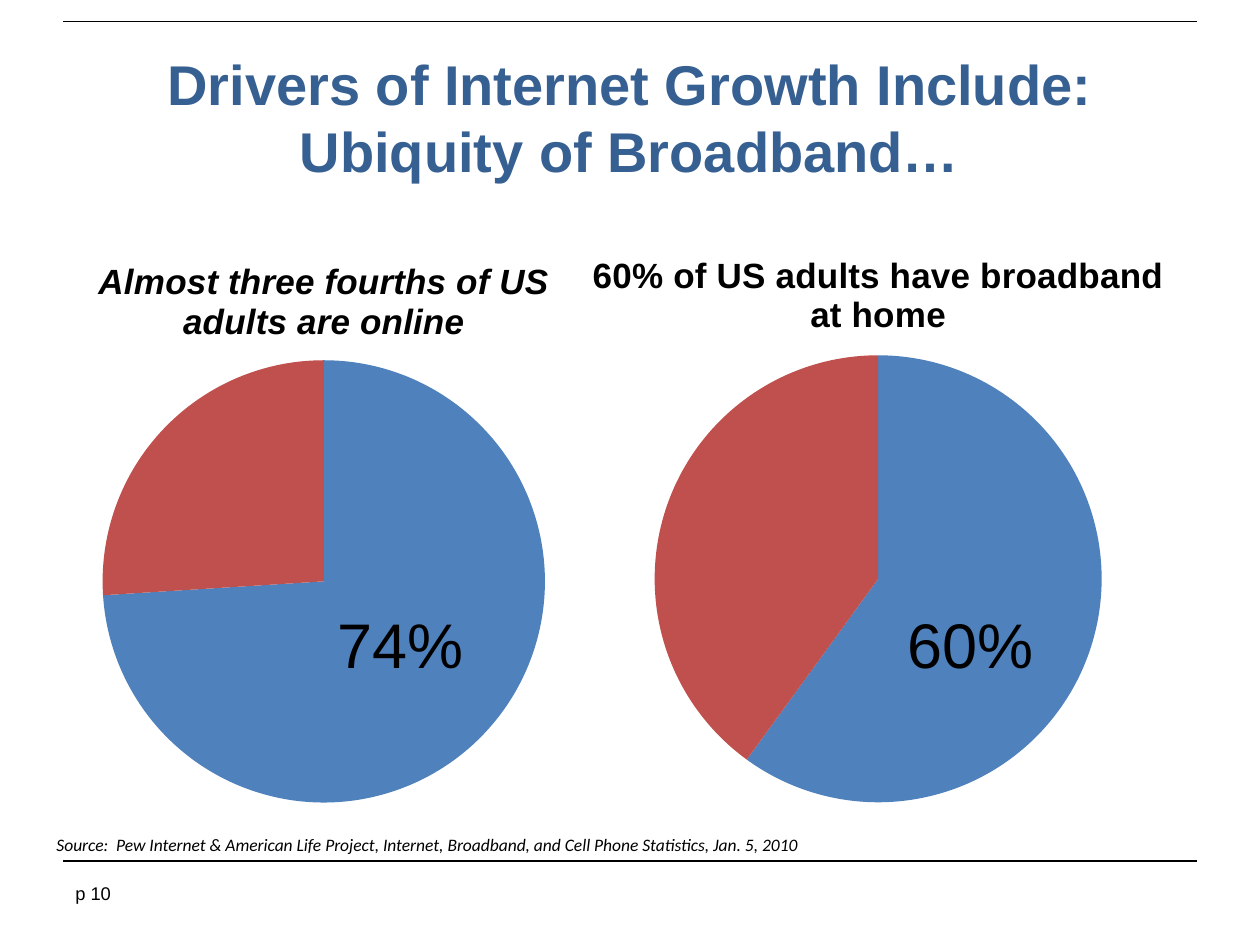
from dataclasses import dataclass

from lxml import etree
from pptx import Presentation
from pptx import util as u
from pptx.chart.data import CategoryChartData
from pptx.dml.color import RGBColor
from pptx.enum import chart as charts, shapes, text
from pptx.oxml import parse_xml
from pptx.oxml.ns import nsdecls, qn


@dataclass(frozen=True)
class Theme:
    heading: str = "Arial"
    body: str = "Calibri"
    ink: str = "000000"
    title: str = "376092"
    slices: tuple = ("4F81BD", "C0504D")
    title_size: float = 32
    chart_title_size: float = 20
    chart_size: float = 18
    label_size: float = 36
    source_size: float = 10
    page_size: float = 10.5
    rule_width: float = 1


class SlideBuilder:
    """Places elements on a grid of 100 columns by 75 rows."""

    COLUMNS, ROWS = 100, 75

    def __init__(self, presentation, theme):
        self.theme = theme
        self.cell_width = presentation.slide_width / self.COLUMNS
        self.cell_height = presentation.slide_height / self.ROWS
        self.slide = presentation.slides.add_slide(presentation.slide_layouts[5])

    def place(self, column, row, columns, rows):
        return (u.Emu(round(column * self.cell_width)), u.Emu(round(row * self.cell_height)),
                u.Emu(round(columns * self.cell_width)), u.Emu(round(rows * self.cell_height)))

    def style(self, font, name, size, color=None, bold=False, italic=False):
        font.name, font.size = name, u.Pt(size)
        font.bold, font.italic = bold, italic
        font.color.rgb = RGBColor.from_string(color or self.theme.ink)

    def rule(self, row):
        left, top, width, _ = self.place(5, row, 90, 0)
        line = self.slide.shapes.add_connector(
            shapes.MSO_CONNECTOR.STRAIGHT, left, top, left + width, top)
        line.line.color.rgb = RGBColor.from_string(self.theme.ink)
        line.line.width = u.Pt(self.theme.rule_width)
        etree.SubElement(line._element.spPr, qn("a:effectLst"))

    def title(self, wording, area):
        shape = self.slide.shapes.title
        shape.left, shape.top, shape.width, shape.height = self.place(*area)
        frame = shape.text_frame
        frame.text = wording
        frame.word_wrap = True
        frame.vertical_anchor = text.MSO_ANCHOR.MIDDLE
        paragraph = frame.paragraphs[0]
        paragraph.alignment = text.PP_ALIGN.CENTER
        self.style(paragraph.runs[0].font, self.theme.heading, self.theme.title_size,
                   self.theme.title, bold=True)

    def text(self, wording, area, name, size, italic=False, wrap=True, spacing=None):
        frame = self.slide.shapes.add_textbox(*self.place(*area)).text_frame
        frame.text = wording
        frame.word_wrap = wrap
        paragraph = frame.paragraphs[0]
        paragraph.line_spacing = spacing
        self.style(paragraph.runs[0].font, name, size, italic=italic)

    def pie(self, heading, share, area, italic=False):
        data = CategoryChartData()
        data.categories = ["1", "2"]
        data.add_series("Series 1", (share, 100 - share))
        chart = self.slide.shapes.add_chart(
            charts.XL_CHART_TYPE.PIE, *self.place(*area), data).chart
        chart.has_legend = False
        self.style(chart.font, self.theme.body, self.theme.chart_size)

        # Heading above the pie
        chart.has_title = True
        chart.chart_title.include_in_layout = False
        frame = chart.chart_title.text_frame
        frame.text = heading
        self.style(frame.paragraphs[0].runs[0].font, self.theme.heading,
                   self.theme.chart_title_size, bold=True, italic=italic)

        # Slice colours
        plot = chart.plots[0]
        plot.vary_by_categories = True
        for index, color in enumerate(self.theme.slices):
            fill = plot.series[0].points[index].format.fill
            fill.solid()
            fill.fore_color.rgb = RGBColor.from_string(color)
        self.fit_pie(chart, area)

    def fit_pie(self, chart, area):
        """Centre a round plot just above the bottom of the chart."""
        diameter, bottom = 0.755, 0.97
        width = diameter * area[3] / area[2]
        values = {"x": (1 - width) / 2, "y": bottom - diameter, "w": width, "h": diameter}
        sizes = "".join(f'<c:{key} val="{value:.4f}"/>' for key, value in values.items())
        plot_area = chart._chartSpace.find(qn("c:chart")).find(qn("c:plotArea"))
        for layout in plot_area.findall(qn("c:layout")):
            plot_area.remove(layout)
        plot_area.insert(0, parse_xml(
            f'<c:layout {nsdecls("c")}><c:manualLayout><c:layoutTarget val="inner"/>'
            f'<c:xMode val="edge"/><c:yMode val="edge"/>{sizes}</c:manualLayout></c:layout>'))


def main():
    presentation = Presentation()
    presentation.slide_width, presentation.slide_height = u.Inches(10), u.Inches(7.5)
    theme = Theme()
    builder = SlideBuilder(presentation, theme)

    # Frame and title
    for row in (68.35, 1.7):
        builder.rule(row)
    builder.title("Drivers of Internet Growth Include: Ubiquity of Broadband…", (5, 3, 90, 12.5))

    # Pies, then their share labels on top
    pies = (
        ("Almost three fourths of US adults are online", 74, (0, 18.6, 51.4, 46.5), True, 25.8),
        ("60% of US adults have broadband at home", 60, (39.4, 18.1, 60.6, 47), False, 71),
    )
    for heading, share, area, italic, _ in pies:
        builder.pie(heading, share, area, italic)
    for _, share, _, _, column in pies:
        builder.text(f"{share}%", (column, 47.6, 12.1, 7.1), theme.heading, theme.label_size,
                     wrap=False)

    # Source and page number
    builder.text("Source:  Pew Internet & American Life Project, Internet, Broadband, "
                 "and Cell Phone Statistics, Jan. 5, 2010",
                 (3.5, 65.9, 65.3, 2.5), theme.body, theme.source_size, italic=True, spacing=0.9)
    builder.text("p 10", (5, 69.5, 23.3, 4), theme.heading, theme.page_size)

    presentation.save("out.pptx")


if __name__ == "__main__":
    main()
